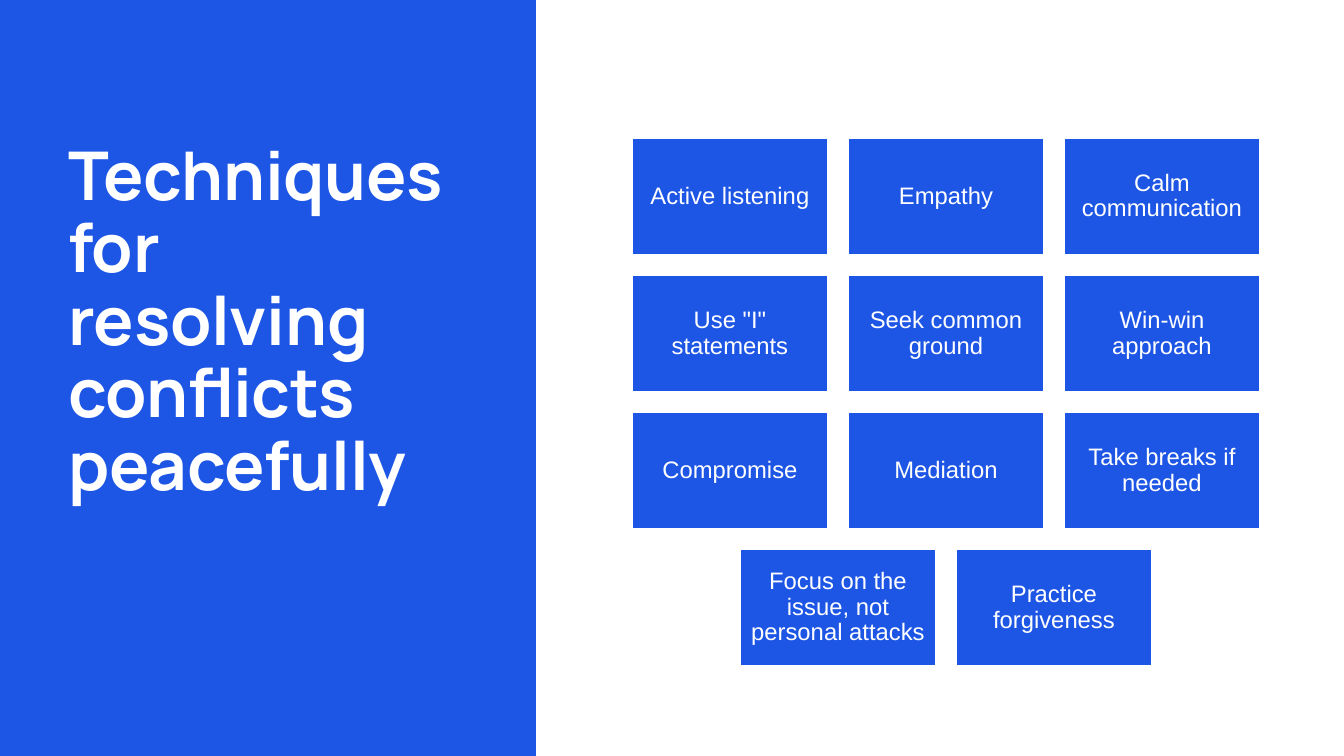
from pptx import Presentation
from pptx.dml.color import RGBColor
from pptx.enum.shapes import MSO_SHAPE
from pptx.enum.text import MSO_ANCHOR, MSO_AUTO_SIZE, PP_ALIGN
from pptx.util import Pt

RECTANGLE = MSO_SHAPE.RECTANGLE
TOP, MIDDLE = MSO_ANCHOR.TOP, MSO_ANCHOR.MIDDLE
LEFT, CENTER = PP_ALIGN.LEFT, PP_ALIGN.CENTER
NO_AUTOFIT = MSO_AUTO_SIZE.NONE

EMU_PER_PX = 914400 / 100.8
SLIDE_WIDTH, SLIDE_HEIGHT = 1344, 756
TITLE_ONLY = 5
BLUE, WHITE = "1D55E5", "FFFFFF"

TITLE = "Techniques for resolving conflicts peacefully"
TECHNIQUES = [
    "Active listening", "Empathy", "Calm communication",
    'Use "I" statements', "Seek common ground", "Win-win approach",
    "Compromise", "Mediation", "Take breaks if needed",
    "Focus on the issue, not personal attacks", "Practice forgiveness",
]
COLUMNS = 3
GRID_LEFT, GRID_TOP = 632, 138
CARD_WIDTH, CARD_HEIGHT, GAP = 196, 117, 20


def px(length):
    return round(length * EMU_PER_PX)


def color(value):
    return RGBColor.from_string(value)


def apply(target, values):
    for name, value in values.items():
        setattr(target, name, value)


def write(shape, text, frame_format, paragraph_format, font_format):
    frame = shape.text_frame
    apply(frame, {"word_wrap": True, "auto_size": NO_AUTOFIT, **frame_format})
    paragraph = frame.paragraphs[0]
    apply(paragraph, {"line_spacing": 0.9, "space_before": Pt(0), **paragraph_format})
    run = paragraph.add_run()
    run.text = text
    apply(run.font, font_format)
    run.font.color.rgb = color(WHITE)
    return run


def add_block(slide, left, top, width, height):
    block = slide.shapes.add_shape(RECTANGLE, px(left), px(top), px(width), px(height))
    block.shadow.inherit = False
    block.fill.solid()
    block.fill.fore_color.rgb = color(BLUE)
    return block


def add_panel(slide):
    panel = add_block(slide, 0, 0, 536, SLIDE_HEIGHT)
    panel.line.fill.background()
    slide.shapes.title.element.addprevious(panel.element)


def fill_title(slide):
    title = slide.shapes.title
    apply(title, {"left": px(58), "top": px(137), "width": px(420), "height": px(518)})
    run = write(title, TITLE, {"vertical_anchor": TOP}, {"alignment": LEFT},
                {"name": "Manrope", "size": Pt(48), "bold": True})
    run.font._element.set("spc", "-20")


def add_card(slide, left, top, technique):
    card = add_block(slide, left, top, CARD_WIDTH, CARD_HEIGHT)
    card.line.color.rgb = color(WHITE)
    card.line.width = Pt(1)
    margins = {f"margin_{side}": px(7) for side in ("left", "top", "right", "bottom")}
    write(card, technique, {"vertical_anchor": MIDDLE, **margins},
          {"alignment": CENTER}, {"name": "Arial", "size": Pt(17)})


def add_cards(slide):
    pitch = CARD_WIDTH + GAP
    for start in range(0, len(TECHNIQUES), COLUMNS):
        row = TECHNIQUES[start:start + COLUMNS]
        left = GRID_LEFT + (COLUMNS - len(row)) * pitch // 2
        top = GRID_TOP + start // COLUMNS * (CARD_HEIGHT + GAP)
        for column, technique in enumerate(row):
            add_card(slide, left + column * pitch, top, technique)


def main():
    presentation = Presentation()
    presentation.slide_width = px(SLIDE_WIDTH)
    presentation.slide_height = px(SLIDE_HEIGHT)
    slide = presentation.slides.add_slide(presentation.slide_layouts[TITLE_ONLY])
    add_panel(slide)
    fill_title(slide)
    add_cards(slide)
    presentation.save("out.pptx")


if __name__ == "__main__":
    main()
